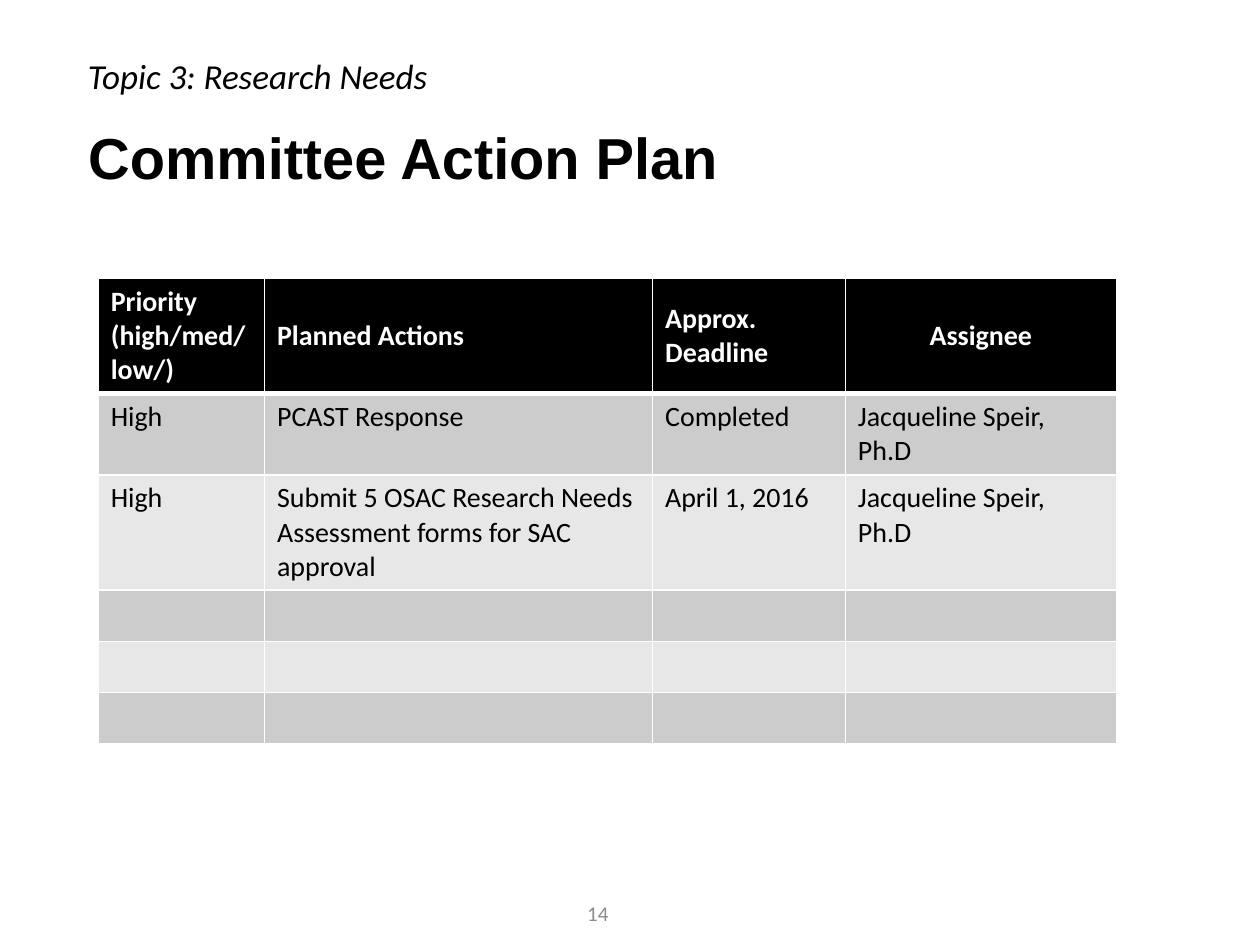
from dataclasses import dataclass

import pptx
import pptx.dml.color
import pptx.enum.text
import pptx.oxml.ns
import pptx.util
from lxml import etree

COLORS = {
    "black": "000000",
    "white": "FFFFFF",
    "dark band": "CCCCCC",
    "light band": "E7E7E7",
    "number": "8C8C8C",
}
UNIT = pptx.util.Inches(0.1)  # the 10 x 7.5 inch page is a grid of 100 columns by 75 rows
ALIGN = pptx.enum.text.PP_ALIGN
ANCHOR = pptx.enum.text.MSO_ANCHOR


@dataclass
class Area:
    """Position and size in grid columns and rows."""
    left: float
    top: float
    width: float
    height: float

    def lengths(self) -> tuple[int, ...]:
        return tuple(round(value * UNIT)
                     for value in (self.left, self.top, self.width, self.height))


@dataclass
class Column:
    heading: str
    width: float
    align: ALIGN = ALIGN.LEFT


TITLE = Area(6, 5.5, 86.2, 14.5)
TOPIC = Area(6, 3.8, 43.6, 4.4)
NUMBER = Area(36.2, 70.5, 22.5, 4)
PLAN = Area(7.8, 22.1, 80.8, 26.7)

COLUMNS = [
    Column("Priority (high/med/low/)", 13.2),
    Column("Planned Actions", 30.8),
    Column("Approx. Deadline", 15.3),
    Column("Assignee", 21.5, ALIGN.CENTER),
]
ACTIONS = [
    ("High", "PCAST Response", "Completed", "Jacqueline Speir, Ph.D"),
    ("High", "Submit 5 OSAC Research Needs Assessment forms for SAC approval",
     "April 1, 2016", "Jacqueline Speir, Ph.D"),
]
EMPTY_ROWS = 3
HEADER_HEIGHT, ROW_HEIGHT = 6.7, 4


def rgb(name: str) -> pptx.dml.color.RGBColor:
    return pptx.dml.color.RGBColor.from_string(COLORS[name])


def write(frame, text: str, *, size: float = 16, font: str = "Calibri",
          color: str = "black", bold: bool = False, italic: bool = False,
          align: ALIGN = ALIGN.LEFT, spacing: float = 1.0) -> None:
    para = frame.paragraphs[0]
    para.alignment = align
    para.line_spacing = spacing
    span = para.add_run()
    span.text = text
    span.font.size = pptx.util.Pt(size)
    span.font.name = font
    span.font.bold = bold
    span.font.italic = italic
    span.font.color.rgb = rgb(color)


def add_label(page, area: Area, text: str, *, anchor: ANCHOR = ANCHOR.TOP, **style) -> None:
    frame = page.shapes.add_textbox(*area.lengths()).text_frame
    frame.word_wrap = True
    frame.vertical_anchor = anchor
    write(frame, text, **style)


def set_borders(cell, top: float = 1, bottom: float = 1) -> None:
    """Draw white cell borders, with widths in points."""
    properties = cell._tc.get_or_add_tcPr()
    qn = pptx.oxml.ns.qn
    for side, width in (("L", 1), ("R", 1), ("T", top), ("B", bottom)):
        line = etree.SubElement(properties, qn(f"a:ln{side}"), w=str(pptx.util.Pt(width)))
        fill = etree.SubElement(line, qn("a:solidFill"))
        etree.SubElement(fill, qn("a:srgbClr"), val=COLORS["white"])


def paint(cell, color: str) -> None:
    cell.fill.solid()
    cell.fill.fore_color.rgb = rgb(color)


def add_plan(page) -> None:
    body = ACTIONS + [("",) * len(COLUMNS)] * EMPTY_ROWS
    table = page.shapes.add_table(len(body) + 1, len(COLUMNS), *PLAN.lengths()).table
    for row in table.rows:
        row.height = round(ROW_HEIGHT * UNIT)
    table.rows[0].height = round(HEADER_HEIGHT * UNIT)

    for index, column in enumerate(COLUMNS):
        table.columns[index].width = round(column.width * UNIT)
        cell = table.cell(0, index)
        set_borders(cell, bottom=3)
        paint(cell, "black")
        cell.vertical_anchor = ANCHOR.MIDDLE
        write(cell.text_frame, column.heading, color="white", bold=True, align=column.align)

    for number, texts in enumerate(body, start=1):
        for index, text in enumerate(texts):
            cell = table.cell(number, index)
            set_borders(cell, top=3 if number == 1 else 1)
            paint(cell, "dark band" if number % 2 else "light band")
            if text:
                write(cell.text_frame, text)


def main() -> None:
    deck = pptx.Presentation()
    deck.slide_width, deck.slide_height = 100 * UNIT, 75 * UNIT
    page = deck.slides.add_slide(deck.slide_layouts.get_by_name("Title Only"))

    title = page.shapes.title
    title.left, title.top, title.width, title.height = TITLE.lengths()
    title.text_frame.vertical_anchor = ANCHOR.MIDDLE
    write(title.text_frame, "Committee Action Plan", size=33, font="Arial",
          bold=True, spacing=0.9)

    add_plan(page)
    add_label(page, TOPIC, "Topic 3: Research Needs", size=20, italic=True)
    add_label(page, NUMBER, "14", size=12, color="number",
              align=ALIGN.CENTER, anchor=ANCHOR.MIDDLE)
    deck.save("out.pptx")


if __name__ == "__main__":
    main()
